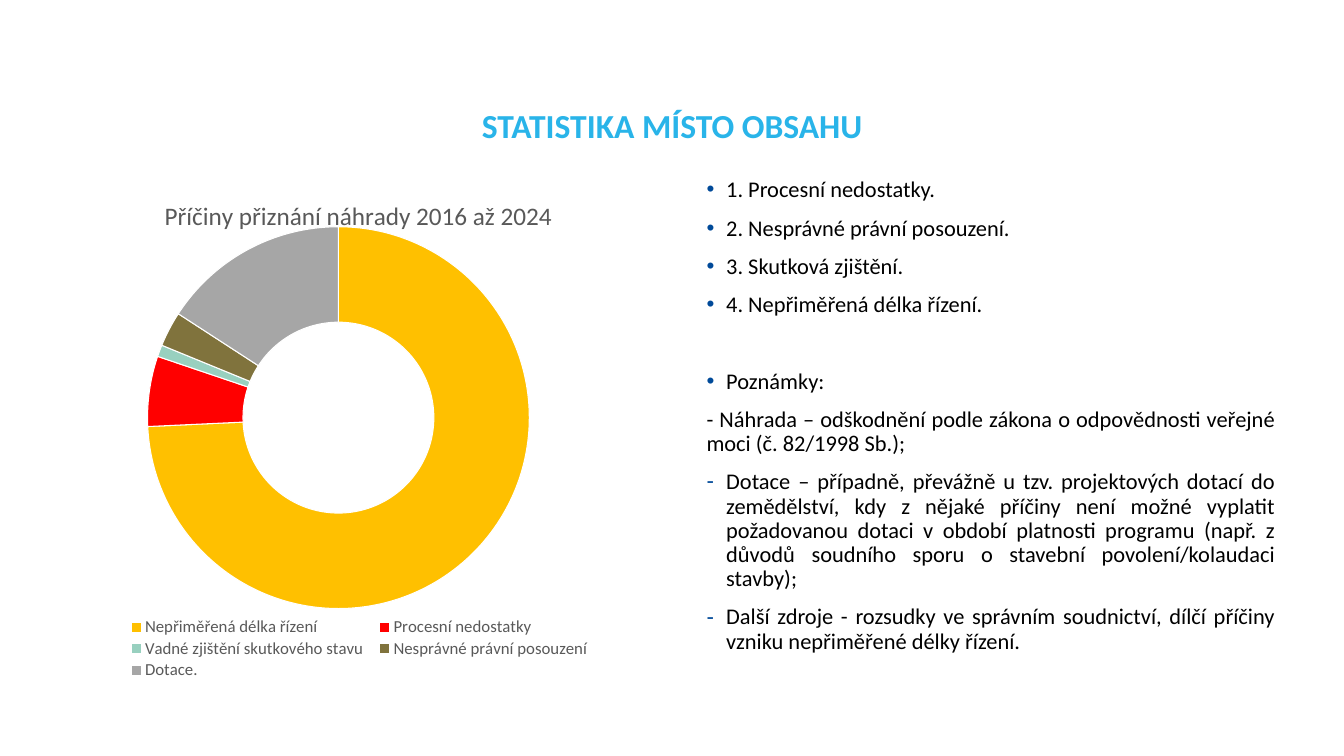
from lxml import etree
from pptx import Presentation
from pptx.chart.data import CategoryChartData
from pptx.dml.color import RGBColor
from pptx.enum.chart import XL_CHART_TYPE, XL_LEGEND_POSITION
from pptx.enum.text import PP_ALIGN
from pptx.oxml.ns import qn
from pptx.util import Inches, Pt

DOUGHNUT = XL_CHART_TYPE.DOUGHNUT
BOTTOM = XL_LEGEND_POSITION.BOTTOM
LEFT, CENTER, JUSTIFY = PP_ALIGN.LEFT, PP_ALIGN.CENTER, PP_ALIGN.JUSTIFY

FONT = "Calibri"
COLORS = {
    "heading": "29B4E9", "body": "000000", "bullet": "004A99",
    "chart_text": "595959", "slice_edge": "FFFFFF",
}
MARGIN, CONTENT_TOP, RIGHT_COLUMN = 1.37, 3.54, 14.02
COLUMN_SIZE = (11.29, 10.09)
INDENT = Inches(0.39)

CAUSES = [
    ("Nepřiměřená délka řízení", 75, "FFC000"),
    ("Procesní nedostatky", 6, "FF0000"),
    ("Vadné zjištění skutkového stavu", 1, "98D0BF"),
    ("Nesprávné právní posouzení", 3, "80733D"),
    ("Dotace.", 16, "A6A6A6"),
]

NOTES = [
    ("1. Procesní nedostatky.", "•", LEFT, 0),
    ("2. Nesprávné právní posouzení.", "•", LEFT, 20),
    ("3. Skutková zjištění.", "•", LEFT, 20),
    ("4. Nepřiměřená délka řízení.", "•", LEFT, 20),
    ("Poznámky:", "•", LEFT, 75),
    ("- Náhrada – odškodnění podle zákona o odpovědnosti veřejné moci "
     "(č. 82/1998 Sb.);", None, JUSTIFY, 20),
    ("Dotace – případně, převážně u tzv. projektových dotací do zemědělství, "
     "kdy z nějaké příčiny není možné vyplatit požadovanou dotaci v období "
     "platnosti programu (např. z důvodů soudního sporu o stavební "
     "povolení/kolaudaci stavby);", "-", JUSTIFY, 20),
    ("Další zdroje - rozsudky ve správním soudnictví, dílčí příčiny vzniku "
     "nepřiměřené délky řízení.", "-", JUSTIFY, 20),
]


def style_font(font, size, color, bold=False):
    """Apply the slide typeface with a size and a colour."""
    font.name, font.size, font.bold = FONT, Pt(size), bold
    font.color.rgb = RGBColor.from_string(COLORS[color])


def add_text_frame(slide, left, top, width, height):
    """Add a wrapping text box without insets and return its frame."""
    frame = slide.shapes.add_textbox(
        Inches(left), Inches(top), Inches(width), Inches(height)).text_frame
    frame.word_wrap = True
    frame.margin_left = frame.margin_right = 0
    frame.margin_top = frame.margin_bottom = 0
    return frame


def add_bullet(paragraph, mark):
    """Give a paragraph a hanging coloured bullet."""
    properties = paragraph._p.get_or_add_pPr()
    properties.set("marL", str(INDENT))
    properties.set("indent", str(-INDENT))
    bullet_color = etree.SubElement(properties, qn("a:buClr"))
    etree.SubElement(bullet_color, qn("a:srgbClr"), val=COLORS["bullet"])
    etree.SubElement(properties, qn("a:buFont"), typeface="Arial")
    etree.SubElement(properties, qn("a:buChar"), char=mark)


def add_heading(slide, text):
    """Add the centred slide heading."""
    heading = add_text_frame(slide, MARGIN, 2.17, 23.94, 1.34).paragraphs[0]
    heading.text = text
    heading.alignment, heading.line_spacing = CENTER, 0.9
    style_font(heading.runs[0].font, 48, "heading", bold=True)


def add_notes(slide):
    """Add the column of causes and remarks."""
    frame = add_text_frame(slide, RIGHT_COLUMN, CONTENT_TOP, *COLUMN_SIZE)
    for index, (text, mark, alignment, gap) in enumerate(NOTES):
        note = frame.add_paragraph() if index else frame.paragraphs[0]
        note.text = text
        note.alignment, note.line_spacing = alignment, 0.9
        note.space_before = Pt(gap)
        if mark:
            add_bullet(note, mark)
        style_font(note.runs[0].font, 32, "body")


def place_chart_part(part, position, **settings):
    """Set a manual layout on a chart part, at a child position if missing."""
    layout = part.find(qn("c:layout"))
    if layout is None:
        layout = etree.Element(qn("c:layout"))
        part.insert(position, layout)
    manual = etree.SubElement(layout, qn("c:manualLayout"))
    for name, value in settings.items():
        etree.SubElement(manual, qn(f"c:{name}"), val=str(value))


def add_causes_chart(slide):
    """Add the doughnut of reasons for compensation."""
    data = CategoryChartData()
    data.categories = [name for name, _, _ in CAUSES]
    data.add_series("Series 1", [share for _, share, _ in CAUSES])
    chart = slide.shapes.add_chart(
        DOUGHNUT, Inches(MARGIN), Inches(CONTENT_TOP),
        *map(Inches, COLUMN_SIZE), data).chart
    style_font(chart.font, 10, "body")

    chart.has_title = True
    title = chart.chart_title.text_frame.paragraphs[0]
    title.text = "Příčiny přiznání náhrady 2016 až 2024"
    style_font(title.runs[0].font, 36, "chart_text")

    chart.has_legend = True
    chart.legend.position = BOTTOM
    chart.legend.include_in_layout = False
    style_font(chart.legend.font, 24, "chart_text")

    plot = chart.plots[0]
    plot.vary_by_categories = True
    plot._element.find(qn("c:holeSize")).set("val", "75")
    for index, (_, _, color) in enumerate(CAUSES):
        slice_format = plot.series[0].points[index].format
        slice_format.fill.solid()
        slice_format.fill.fore_color.rgb = RGBColor.from_string(color)
        slice_format.line.color.rgb = RGBColor.from_string(COLORS["slice_edge"])
        slice_format.line.width = Pt(1.5)

    place_chart_part(chart.chart_title._element, 1,
                     xMode="edge", yMode="edge", x=0.16, y=0.03)
    place_chart_part(chart.legend._element, 1, xMode="edge", yMode="edge",
                     x=0.09, y=0.86, w=0.84, h=0.13)
    place_chart_part(plot._element.getparent(), 0, layoutTarget="inner",
                     xMode="edge", yMode="edge",
                     x=0.138, y=0.082, w=0.671, h=0.777)


def main():
    """Build and save the slide."""
    presentation = Presentation()
    presentation.slide_width, presentation.slide_height = Inches(26.67), Inches(15)
    slide = presentation.slides.add_slide(presentation.slide_layouts[6])
    add_heading(slide, "STATISTIKA MÍSTO OBSAHU")
    add_causes_chart(slide)
    add_notes(slide)
    presentation.save("out.pptx")


if __name__ == "__main__":
    main()
